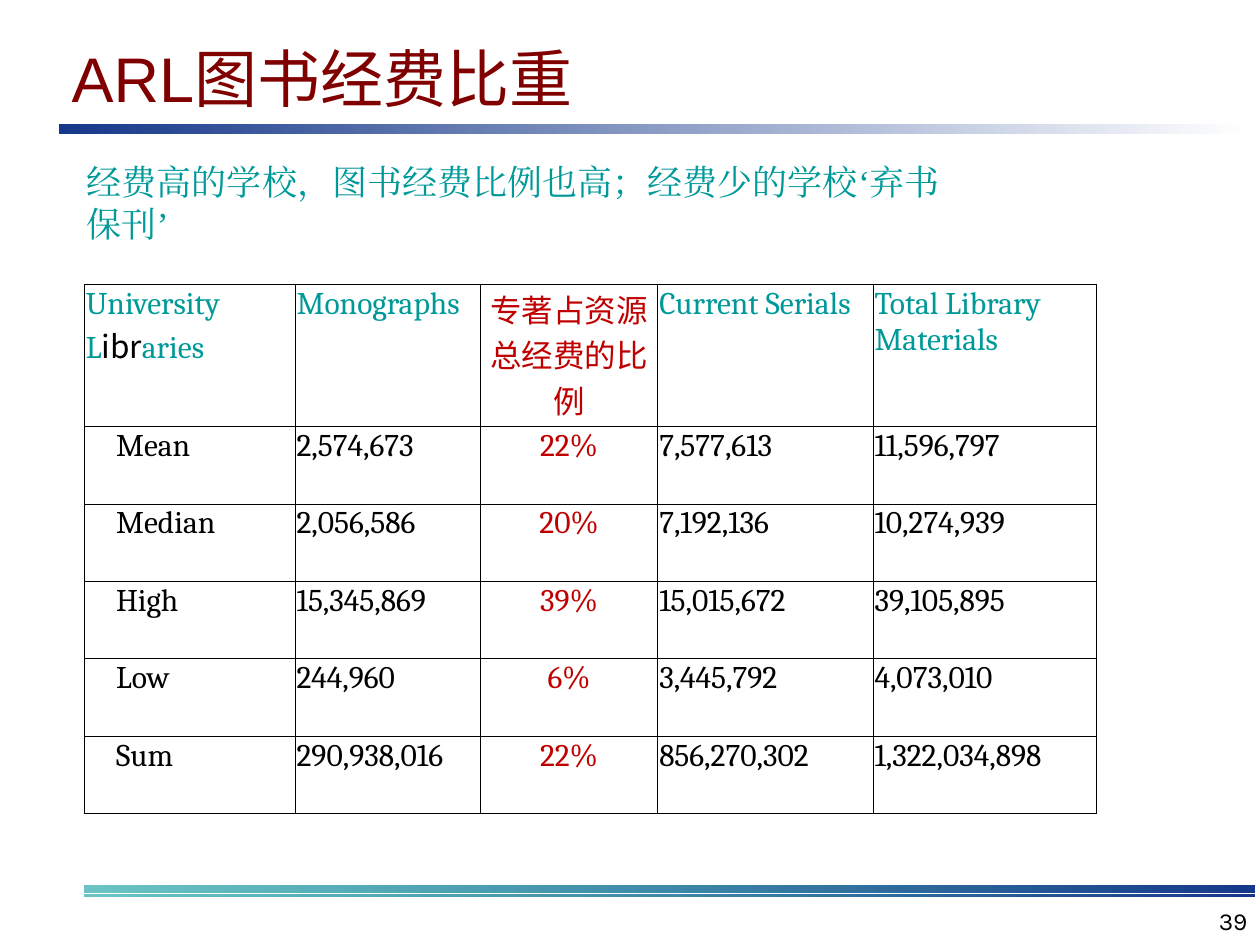
from lxml.etree import SubElement
from pptx import Presentation
from pptx.dml.color import RGBColor
from pptx.enum.shapes import MSO_SHAPE
from pptx.enum.text import MSO_ANCHOR, MSO_AUTO_SIZE, PP_ALIGN
from pptx.oxml.ns import qn
from pptx.util import Cm, Pt

TEAL, NAVY, RED, MAROON = "009999", "16388A", "C00000", "800000"
BLACK, WHITE = "000000", "FFFFFF"
SERIF, CJK = "Cambria", "Noto Sans CJK SC"

TITLE = "ARL图书经费比重"
SUBTITLE = "经费高的学校，图书经费比例也高；经费少的学校‘弃书保刊’"
PAGE_NUMBER = "39"

# Each header is a list of (text, font, colour)
HEADERS = [
    [("University L", SERIF, TEAL), ("ibr", CJK, BLACK), ("aries", SERIF, TEAL)],
    [("Monographs", SERIF, TEAL)],
    [("专著占资源总经费的比例", CJK, RED)],
    [("Current Serials", SERIF, TEAL)],
    [("Total Library Materials", SERIF, TEAL)],
]
STATISTICS = [
    ("Mean", "2,574,673", "22%", "7,577,613", "11,596,797"),
    ("Median", "2,056,586", "20%", "7,192,136", "10,274,939"),
    ("High", "15,345,869", "39%", "15,015,672", "39,105,895"),
    ("Low", "244,960", "6%", "3,445,792", "4,073,010"),
    ("Sum", "290,938,016", "22%", "856,270,302", "1,322,034,898"),
]
SHARE_COLUMN = 2
COLUMN_WIDTHS = [4.25, 3.73, 3.58, 4.34, 4.5]
HEADER_HEIGHT, ROW_HEIGHT = 2.87, 1.56

# left, top, width, height, (colour, opacity %) at each end
BARS = [
    (1.19, 2.51, 24, 0.2, (NAVY, 100), (WHITE, 100)),
    (1.7, 17.86, 23.6, 0.13, (TEAL, 58), (NAVY, 100)),
    (1.7, 18.03, 23.6, 0.05, (TEAL, 58), (NAVY, 100)),
]


def set_font(font, name, size, colour):
    """Use one typeface for both Latin and East Asian text."""
    font.size = Pt(size)
    font.color.rgb = RGBColor.from_string(colour)
    font.name = name
    SubElement(font._element, qn("a:ea"), typeface=name)


def add_bar(slide, left, top, width, height, *ends):
    bar = slide.shapes.add_shape(MSO_SHAPE.RECTANGLE, Cm(left), Cm(top), Cm(width), Cm(height))
    bar.shadow.inherit = False
    bar.line.fill.background()
    bar.fill.gradient()
    bar.fill.gradient_angle = 0
    for stop, (colour, opacity) in zip(bar.fill.gradient_stops, ends):
        stop.color.rgb = RGBColor.from_string(colour)
        if opacity < 100:
            rgb = stop._gs.find(qn("a:srgbClr"))
            SubElement(rgb, qn("a:alpha"), val=str(opacity * 1000))


def place_text(shape, box, text, font, align=PP_ALIGN.LEFT, anchor=MSO_ANCHOR.TOP):
    shape.left, shape.top, shape.width, shape.height = map(Cm, box)
    frame = shape.text_frame
    frame.word_wrap = True
    frame.auto_size = MSO_AUTO_SIZE.NONE
    frame.vertical_anchor = anchor
    paragraph = frame.paragraphs[0]
    paragraph.alignment = align
    run = paragraph.add_run()
    run.text = text
    set_font(run.font, *font)


def add_borders(cell):
    properties = cell._tc.get_or_add_tcPr()
    for side in ("lnL", "lnR", "lnT", "lnB"):
        line = SubElement(properties, qn(f"a:{side}"), w=str(Pt(0.5)))
        fill = SubElement(line, qn("a:solidFill"))
        SubElement(fill, qn("a:srgbClr"), val=BLACK)


def fill_cell(cell, runs, centred, indent):
    cell.margin_left = Cm(indent)
    cell.margin_top = cell.margin_right = Cm(0.03)
    cell.margin_bottom = 0
    add_borders(cell)
    cell.fill.background()
    paragraph = cell.text_frame.paragraphs[0]
    paragraph.alignment = PP_ALIGN.CENTER if centred else PP_ALIGN.LEFT
    for text, name, colour in runs:
        run = paragraph.add_run()
        run.text = text
        set_font(run.font, name, 18, colour)


def add_statistics_table(slide):
    rows = [HEADERS] + [
        [[(value, SERIF, RED if c == SHARE_COLUMN else BLACK)] for c, value in enumerate(row)]
        for row in STATISTICS
    ]
    heights = [HEADER_HEIGHT] + [ROW_HEIGHT] * len(STATISTICS)
    table = slide.shapes.add_table(
        len(rows), len(COLUMN_WIDTHS), Cm(1.7), Cm(5.73),
        Cm(sum(COLUMN_WIDTHS)), Cm(sum(heights))).table
    table.first_row = table.horz_banding = False
    for column, width in zip(table.columns, COLUMN_WIDTHS):
        column.width = Cm(width)
    for r, (row, height) in enumerate(zip(rows, heights)):
        table.rows[r].height = Cm(height)
        for c, runs in enumerate(row):
            indent = 0.64 if r > 0 and c == 0 else 0.03
            fill_cell(table.cell(r, c), runs, c == SHARE_COLUMN, indent)


def main():
    deck = Presentation()
    deck.slide_width, deck.slide_height = Cm(25.4), Cm(19.05)
    slide = deck.slides.add_slide(deck.slide_layouts[5])
    for bar in BARS:
        add_bar(slide, *bar)
    place_text(slide.shapes.title, (1.19, 0.53, 18.5, 1.91), TITLE,
               ("Arial", 36, MAROON), anchor=MSO_ANCHOR.BOTTOM)
    add_statistics_table(slide)
    place_text(slide.shapes.add_textbox(0, 0, 0, 0), (23.19, 18.14, 2.21, 0.91),
               PAGE_NUMBER, ("Karla", 14, BLACK), align=PP_ALIGN.RIGHT)
    place_text(slide.shapes.add_textbox(0, 0, 0, 0), (1.5, 3.12, 18.4, 1.96),
               SUBTITLE, ("Times New Roman", 20, TEAL))
    deck.save("out.pptx")


if __name__ == "__main__":
    main()
